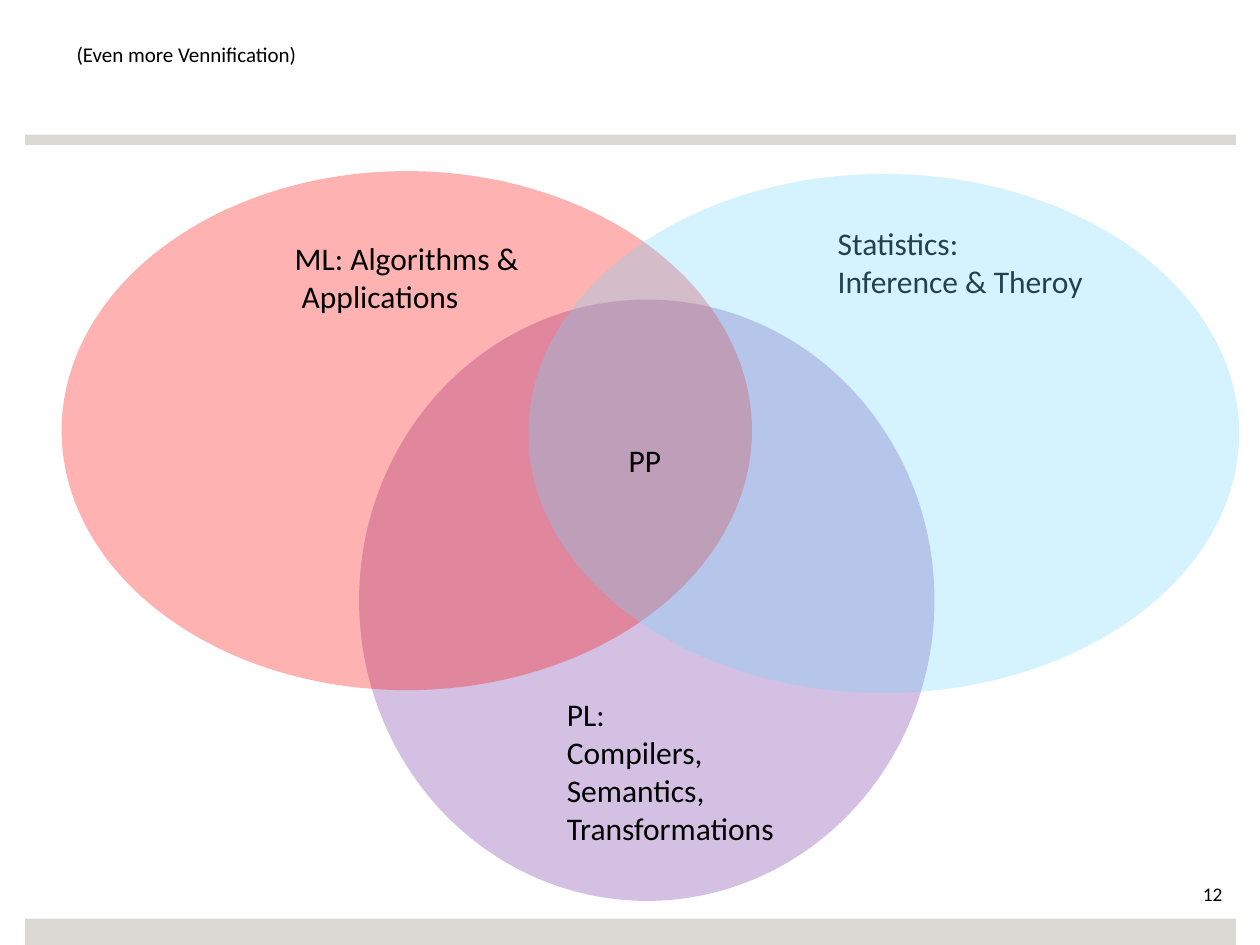
from lxml import etree
from pptx import Presentation
from pptx import util as u
from pptx.dml.color import RGBColor
from pptx.enum import shapes, text
from pptx.oxml import ns

BLACK = RGBColor(0x00, 0x00, 0x00)
GREY = RGBColor(0xDA, 0xD9, 0xD3)
PURPLE = RGBColor(0x70, 0x30, 0xA0)
RED = RGBColor(0xFF, 0x00, 0x00)
BLUE = RGBColor(0x76, 0xD6, 0xFF)


def add_shape(slide, kind, box, color):
    shape = slide.shapes.add_shape(kind, *map(u.Pt, box))
    shape.shadow.inherit = False
    shape.fill.solid()
    shape.fill.fore_color.rgb = color
    shape.line.fill.background()
    return shape


def add_bar(slide, top, height):
    add_shape(slide, shapes.MSO_SHAPE.RECTANGLE, (14.4, top, 691.9, height), GREY)


def add_oval(slide, box, color, alpha=30):
    oval = add_shape(slide, shapes.MSO_SHAPE.OVAL, box, color)
    tint = oval.fill._xPr.find(".//" + ns.qn("a:srgbClr"))
    etree.SubElement(tint, ns.qn("a:alpha"), val=str(alpha * 1000))


def add_text(slide, box, *lines, size=18, align=text.PP_ALIGN.LEFT,
             wrap=False, inset=(7.2, 3.6, 7.2, 3.6)):
    frame = slide.shapes.add_textbox(*map(u.Pt, box)).text_frame
    frame.word_wrap = wrap
    frame.auto_size = (text.MSO_AUTO_SIZE.NONE if wrap
                       else text.MSO_AUTO_SIZE.SHAPE_TO_FIT_TEXT)
    (frame.margin_left, frame.margin_top,
     frame.margin_right, frame.margin_bottom) = map(u.Pt, inset)
    frame.text = "\n".join(lines)
    for para in frame.paragraphs:
        para.alignment = align
        para.font.size = u.Pt(size)
        para.font.name = "Calibri"
        para.font.color.rgb = BLACK


def main():
    deck = Presentation()
    deck.slide_width, deck.slide_height = u.Pt(720), u.Pt(540)
    slide = deck.slides.add_slide(deck.slide_layouts[6])

    add_bar(slide, 77, 5.8)
    add_bar(slide, 524.9, 15.1)
    add_text(slide, (36.7, 20.2, 648, 39.6), "(Even more Vennification)",
             size=12, wrap=True)
    add_oval(slide, (205.2, 171.2, 328.8, 343.6), PURPLE)
    add_text(slide, (626.4, 504, 79.2, 15.8), "12", size=11, wrap=True,
             align=text.PP_ALIGN.RIGHT, inset=(0, 0, 7.2, 0))
    add_oval(slide, (35.2, 97.8, 394.5, 296.6), RED)
    add_text(slide, (161.3, 133.2, 144.7, 50.9),
             "ML: Algorithms &", " Applications")
    add_text(slide, (471.6, 124.6, 157, 50.9),
             "Statistics:", "Inference & Theroy")
    add_text(slide, (316.8, 393.8, 138.2, 94.2),
             "PL:", "Compilers,", "Semantics,", "Transformations")
    add_oval(slide, (301.9, 99.4, 406.2, 296.6), BLUE)
    add_text(slide, (352.1, 248.4, 33.8, 29.1), "PP")

    deck.save("out.pptx")


if __name__ == "__main__":
    main()
